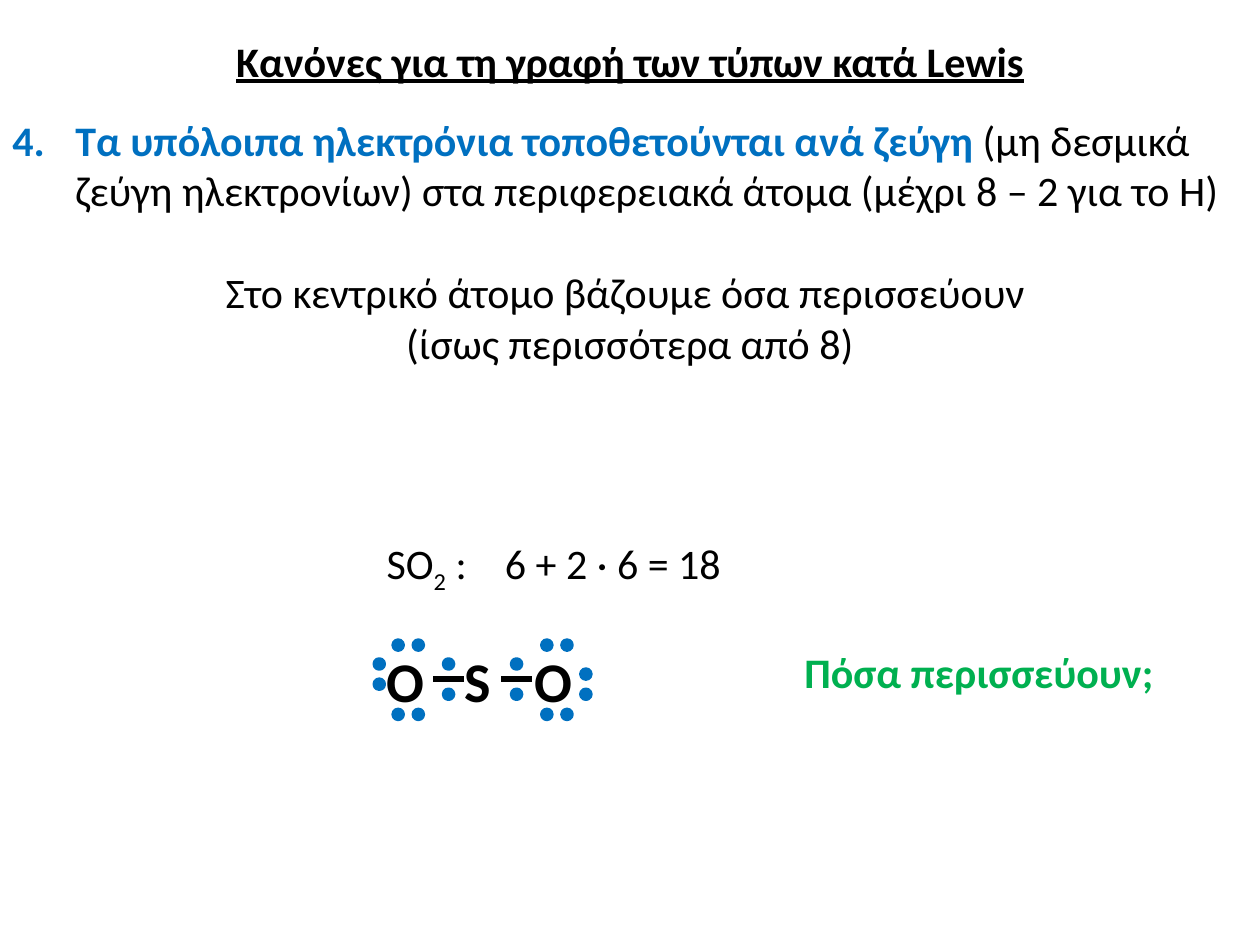
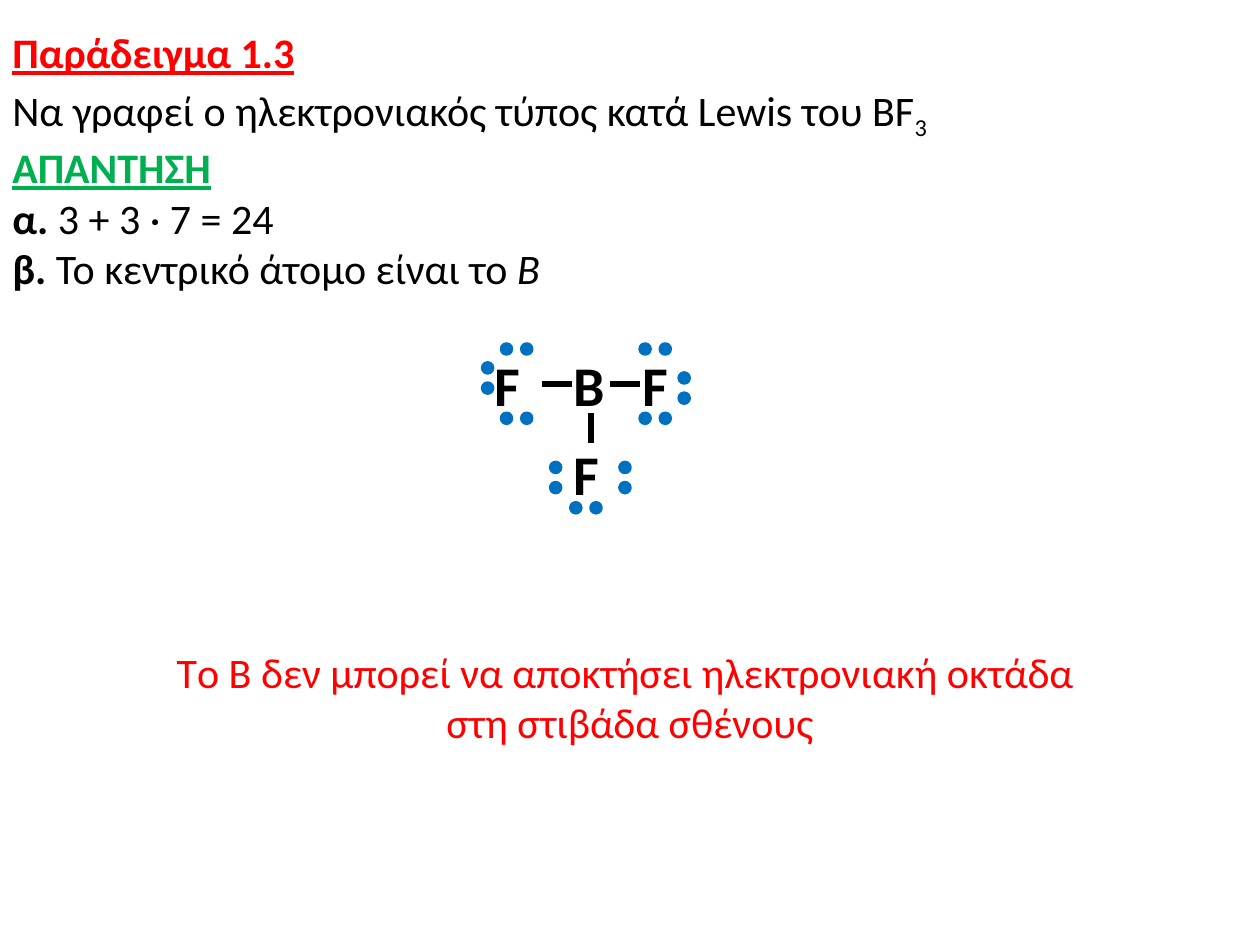
from dataclasses import dataclass

from lxml.etree import SubElement
from pptx import Presentation
from pptx.dml.color import RGBColor
from pptx.enum.shapes import MSO_CONNECTOR, MSO_SHAPE
from pptx.enum.text import MSO_AUTO_SIZE, PP_ALIGN
from pptx.oxml.ns import qn
from pptx.util import Pt

PX = 9144  # EMU in one px, 100 px to the inch


@dataclass(frozen=True)
class Theme:
    font: str = "Calibri"
    black: str = "000000"
    blue: str = "0070C0"
    red: str = "FF0000"
    green: str = "00B050"
    body: int = 24
    atom: int = 32
    line_height: float = 29.3
    dot_line: float = 2
    bond_line: float = 3.5


THEME = Theme()
WIDTH, HEIGHT = 1000, 750
LINE_BOX = 50
ATOM_BOX = 64
DOT = 8
PAIR_GAP = 16
BOND_PAIR_GAP = 24
BOND = 24

# Formats of runs and paragraphs
BOLD = {"bold": True}
HEADING = {"bold": True, "underline": True}
SUBSCRIPT = {"baseline": -25}
CENTRE = {"alignment": PP_ALIGN.CENTER}

# Lone pairs of an atom: offset from its box, and whether the pair lies flat
LEFT_END = [(15, 0, True), (15, 55, True), (0, 15, False)]
RIGHT_END = [(0, 0, True), (0, 55, True), (31, 23, False)]
LOWER_END = [(47, 23, False), (-8, 23, False), (8, 55, True)]


def px(*lengths):
    return [length * PX for length in lengths]


def shifted(pairs, offset):
    return [(x + offset, y, flat) for x, y, flat in pairs]


# Text
def add_run(paragraph, text, formats):
    run = paragraph.add_run()
    run.text = text
    values = {"name": THEME.font, "size": THEME.body, "color": THEME.black, **formats}
    values["size"] = Pt(values["size"])
    run.font.color.rgb = RGBColor.from_string(values.pop("color"))
    baseline = values.pop("baseline", None)
    if baseline is not None:
        run._r.get_or_add_rPr().set("baseline", str(baseline * 1000))
    for name, value in values.items():
        setattr(run.font, name, value)


def add_text(slide, box, *paragraphs, wrap=True):
    """Each paragraph is (runs, paragraph formats); each run is (text, formats)."""
    shape = slide.shapes.add_textbox(*px(*box))
    frame = shape.text_frame
    frame.word_wrap = wrap
    frame.auto_size = MSO_AUTO_SIZE.SHAPE_TO_FIT_TEXT
    for index, (runs, formats) in enumerate(paragraphs):
        paragraph = frame.add_paragraph() if index else frame.paragraphs[0]
        for name, value in formats.items():
            setattr(paragraph, name, value)
        for text, run_formats in runs:
            add_run(paragraph, text, run_formats)
    return shape


def number_paragraph(paragraph, start, indent):
    properties = paragraph._p.get_or_add_pPr()
    properties.set("marL", str(indent * PX))
    properties.set("indent", str(-indent * PX))
    SubElement(properties, qn("a:buAutoNum"), type="arabicPeriod", startAt=str(start))


# Lewis structures
def add_dot(slide, x, y):
    dot = slide.shapes.add_shape(MSO_SHAPE.OVAL, *px(x, y, DOT, DOT))
    dot.shadow.inherit = False
    dot.fill.solid()
    for colour in (dot.fill.fore_color, dot.line.color):
        colour.rgb = RGBColor.from_string(THEME.blue)
    dot.line.width = Pt(THEME.dot_line)


def add_pair(slide, x, y, flat=False, gap=PAIR_GAP):
    add_dot(slide, x, y)
    add_dot(slide, x + gap * flat, y + gap * (not flat))


def add_atom(slide, symbol, x, y, width, lone_pairs=()):
    runs = [(symbol, {"size": THEME.atom, "bold": True})]
    add_text(slide, (x, y, width, ATOM_BOX), (runs, {}), wrap=False)
    for offset_x, offset_y, flat in lone_pairs:
        add_pair(slide, x + offset_x, y + offset_y, flat)


def add_bond(slide, x, y, flat=True):
    end = (x + BOND * flat, y + BOND * (not flat))
    bond = slide.shapes.add_connector(MSO_CONNECTOR.STRAIGHT, *px(x, y, *end))
    bond.line.color.rgb = RGBColor.from_string(THEME.black)
    bond.line.width = Pt(THEME.bond_line)
    SubElement(bond._element.spPr, qn("a:effectLst"))


# Slides
def build_rules(slide):
    add_text(slide, (0, 23, WIDTH, LINE_BOX),
             ([("Κανόνες για τη γραφή των τύπων κατά Lewis", HEADING)], CENTRE))
    rule = add_text(
        slide, (0, 86, WIDTH, 212),
        ([("Τα υπόλοιπα ηλεκτρόνια τοποθετούνται ανά ζεύγη ",
           {"color": THEME.blue, "bold": True}),
          ("(μη δεσμικά ζεύγη ηλεκτρονίων) στα περιφερειακά άτομα "
           "(μέχρι 8 – 2 για το Η)", {})], {}),
        ([("Στο κεντρικό άτομο βάζουμε όσα περισσεύουν ", {})],
         {**CENTRE, "space_before": Pt(THEME.line_height)}),
        ([("(ίσως περισσότερα από 8)", {})], CENTRE))
    number_paragraph(rule.text_frame.paragraphs[0], start=4, indent=50)

    # Electron count
    add_text(slide, (297, 422, 86, LINE_BOX),
             ([("SO", {}), ("2", SUBSCRIPT), (" :", {})], {}), wrap=False)
    add_text(slide, (391, 422, 193, LINE_BOX),
             ([("6 + 2 · 6 = 18", {})], {}), wrap=False)

    # Sulphur dioxide
    top = 508
    add_atom(slide, "O", 297, top, 51, LEFT_END)
    add_atom(slide, "S", 359, top, 41)
    add_atom(slide, "Ο", 414, top, 51, shifted(RIGHT_END, 16))
    for x in (344, 398):
        add_bond(slide, x, top + 31)
        add_pair(slide, x + 8, top + 15, gap=BOND_PAIR_GAP)

    add_text(slide, (617, top, 320, LINE_BOX),
             ([("Πόσα περισσεύουν;", {"color": THEME.green, "bold": True})], CENTRE))


def build_example(slide):
    add_text(slide, (0, 16, WIDTH, LINE_BOX),
             ([("Παράδειγμα 1.3", {**HEADING, "color": THEME.red})], {}))
    add_text(slide, (0, 62, WIDTH, 293),
             ([("Να γραφεί ο ηλεκτρονιακός τύπος κατά Lewis του BF", {}),
               ("3", SUBSCRIPT)], {}),
             ([("ΑΠΑΝΤΗΣΗ", {**HEADING, "color": THEME.green})], {}),
             ([("α. ", BOLD), ("3 + 3 · 7 = 24", {})], {}),
             ([("β. ", BOLD), ("Το κεντρικό άτομο είναι το ", {}),
               ("B", {"italic": True})], {}))

    # Boron trifluoride
    top = 273
    add_atom(slide, "F", 383, top, 41, LEFT_END)
    add_atom(slide, "Β", 445, top, 45)
    add_atom(slide, "F", 500, top, 41, shifted(RIGHT_END, 8))
    add_atom(slide, "F", 445, 344, 41, LOWER_END)
    for x in (430, 484):
        add_bond(slide, x, top + 32)
    add_bond(slide, 469, 328, flat=False)

    # Conclusion
    red = {"color": THEME.red}
    add_text(slide, (0, 508, WIDTH, 91),
             ([("Tο Β δεν μπορεί να αποκτήσει ηλεκτρονιακή οκτάδα ", red)], CENTRE),
             ([("στη στιβάδα σθένους", red)], CENTRE))


def main():
    presentation = Presentation()
    presentation.slide_width, presentation.slide_height = px(WIDTH, HEIGHT)
    blank = presentation.slide_layouts[6]
    for build in (build_rules, build_example):
        build(presentation.slides.add_slide(blank))
    presentation.save("out.pptx")


if __name__ == "__main__":
    main()
